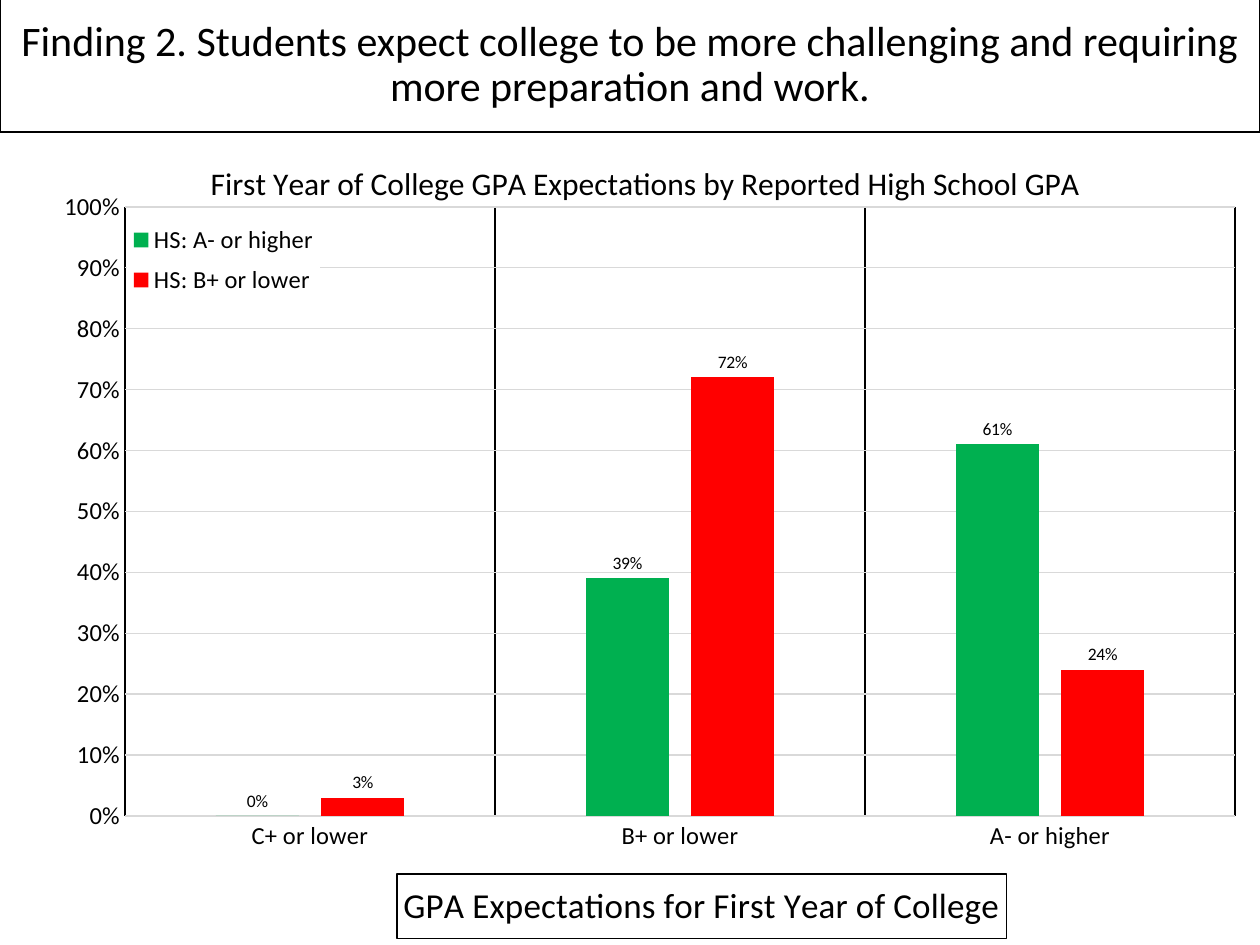
from lxml import etree
from pptx import Presentation
from pptx.chart.data import CategoryChartData
from pptx.dml.color import RGBColor
from pptx.enum.chart import XL_CHART_TYPE, XL_LABEL_POSITION, XL_LEGEND_POSITION, XL_TICK_MARK
from pptx.enum.shapes import MSO_SHAPE
from pptx.enum.text import MSO_ANCHOR, PP_ALIGN
from pptx.oxml.ns import qn
from pptx.util import Pt

COLUMNS = XL_CHART_TYPE.COLUMN_CLUSTERED
OUTSIDE = XL_LABEL_POSITION.OUTSIDE_END
RIGHT = XL_LEGEND_POSITION.RIGHT
NO_TICK = XL_TICK_MARK.NONE

# Content
HEADING = ("Finding 2. Students expect college to be more challenging "
           "and requiring more preparation and work.")
CHART_TITLE = "First Year of College GPA Expectations by Reported High School GPA"
AXIS_TITLE = "GPA Expectations for First Year of College"
EXPECTED = ["C+ or lower", "B+ or lower", "A- or higher"]
HIGH_SCHOOL = [
    ("HS: A- or higher", (0, 0.39, 0.61), "00B050"),
    ("HS: B+ or lower", (0.03, 0.72, 0.24), "FF0000"),
]
BLACK, WHITE, GREY, FONT = "000000", "FFFFFF", "D9D9D9", "Calibri"

# Places in px: left, top, width, height
SLIDE = (1260, 945)
HEADING_BOX = (0, -1, 1260, 133)
CHART_BOX = (20, 126, 1240, 819)
PLOT_BOX = (125, 207, 1110, 609)
LEGEND_BOX = (127, 215, 193, 90)
CHART_TITLE_AT = (205, 156)
AXIS_TITLE_AT = (397, 874)


def px(n):
    return round(n * 914400 / 126)


def rgb(color):
    return RGBColor.from_string(color)


def style_font(font, size, color=BLACK):
    font.name, font.size, font.bold = FONT, Pt(size), False
    font.color.rgb = rgb(color)


def style_line(line, color):
    line.color.rgb = rgb(color)
    line.width = Pt(0.75)


def place(part, box, before, inner=False):
    """Give a chart part a manual layout, as fractions of the chart."""
    for old in part.findall(qn("c:layout")):
        part.remove(old)
    layout = etree.Element(qn("c:layout"))
    manual = etree.SubElement(layout, qn("c:manualLayout"))
    settings = [("layoutTarget", "inner")] if inner else []
    settings += [("xMode", "edge"), ("yMode", "edge")]
    left, top, width, height = CHART_BOX
    offsets = (box[0] - left, box[1] - top, *box[2:])
    settings += [(key, f"{offset / whole:.4f}") for key, offset, whole
                 in zip("xywh", offsets, (width, height, width, height))]
    for key, value in settings:
        etree.SubElement(manual, qn("c:" + key)).set("val", value)
    following = part.find(qn(before)) if before else None
    if following is None:
        part.insert(0, layout)
    else:
        following.addprevious(layout)


def set_title(title, text, size, at):
    paragraph = title.text_frame.paragraphs[0]
    paragraph.text = text
    style_font(paragraph.font, size)
    place(title._element, at, "c:overlay")


prs = Presentation()
prs.slide_width, prs.slide_height = map(px, SLIDE)
slide = prs.slides.add_slide(prs.slide_layouts[6])

# Chart
data = CategoryChartData(number_format="0%")
data.categories = EXPECTED
for name, values, _ in HIGH_SCHOOL:
    data.add_series(name, values)
chart = slide.shapes.add_chart(COLUMNS, *map(px, CHART_BOX), data).chart
style_font(chart.font, 10)
chart.has_title = True
set_title(chart.chart_title, CHART_TITLE, 18, CHART_TITLE_AT)
place(chart._chartSpace.chart.plotArea, PLOT_BOX, None, inner=True)

# Columns and their labels
plot = chart.plots[0]
plot.gap_width, plot.overlap, plot.vary_by_categories = 219, -27, False
for series, (_, _, color) in zip(plot.series, HIGH_SCHOOL):
    series.format.fill.solid()
    series.format.fill.fore_color.rgb = rgb(color)
    labels = series.data_labels
    labels.show_value = True
    labels.number_format, labels.number_format_is_linked = "0%", False
    labels.position = OUTSIDE
    style_font(labels.font, 10)

# Axes
expected_axis, share_axis = chart.category_axis, chart.value_axis
for axis, grid in ((expected_axis, BLACK), (share_axis, GREY)):
    axis.major_tick_mark = axis.minor_tick_mark = NO_TICK
    axis.has_major_gridlines = True
    style_line(axis.major_gridlines.format.line, grid)
    style_font(axis.tick_labels.font, 14)
style_line(expected_axis.format.line, GREY)
share_axis.format.line.fill.background()
share_axis.minimum_scale, share_axis.maximum_scale, share_axis.major_unit = 0, 1, 0.1
share_axis.tick_labels.number_format = "0%"
share_axis.tick_labels.number_format_is_linked = False
set_title(expected_axis.axis_title, AXIS_TITLE, 20, AXIS_TITLE_AT)
style_line(expected_axis.axis_title.format.line, BLACK)

# Legend over the plot, on white
chart.has_legend = True
legend = chart.legend
legend.position, legend.include_in_layout = RIGHT, True
style_font(legend.font, 14)
place(legend._element, LEGEND_BOX, "c:overlay")
legend_look = etree.Element(qn("c:spPr"))
legend_fill = etree.SubElement(legend_look, qn("a:solidFill"))
etree.SubElement(legend_fill, qn("a:srgbClr")).set("val", WHITE)
legend._element.find(qn("c:txPr")).addprevious(legend_look)

# Heading
heading = slide.shapes.add_shape(MSO_SHAPE.RECTANGLE, *map(px, HEADING_BOX))
heading.shadow.inherit = False
heading.fill.background()
style_line(heading.line, BLACK)
frame = heading.text_frame
frame.word_wrap = True
frame.vertical_anchor = MSO_ANCHOR.MIDDLE
paragraph = frame.paragraphs[0]
paragraph.text = HEADING
paragraph.alignment = PP_ALIGN.CENTER
paragraph.line_spacing = 0.9
style_font(paragraph.font, 24)

prs.save("out.pptx")
